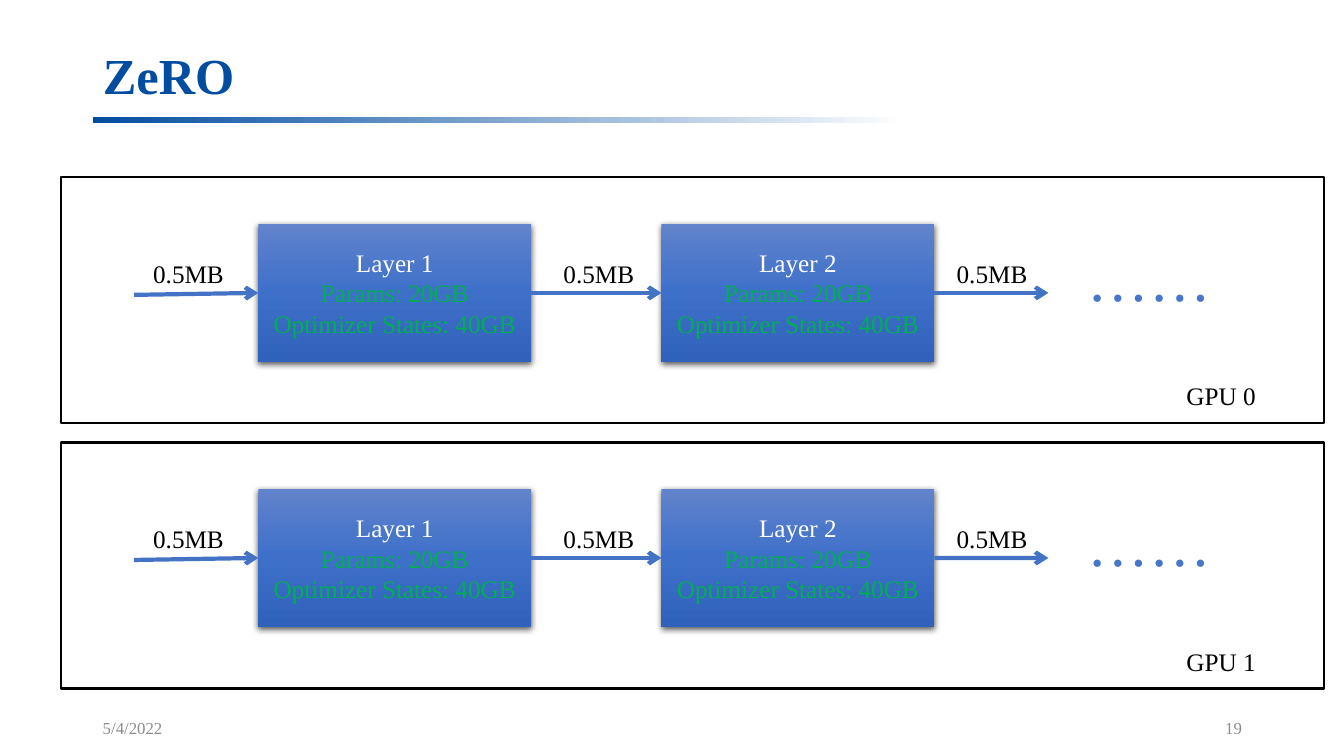
from lxml import etree
from pptx import Presentation
from pptx import util as u
from pptx.dml.color import RGBColor
from pptx.enum import shapes, text
from pptx.oxml.ns import qn

FONT = "Times New Roman"
NAVY = RGBColor(0x03, 0x4D, 0xA1)
BLUE = RGBColor(0x44, 0x72, 0xC4)
DOT_BLUE = RGBColor(0x48, 0x76, 0xCA)
GREEN = RGBColor(0x00, 0xB0, 0x50)
GRAY = RGBColor(0x8C, 0x8C, 0x8C)
BLACK = RGBColor(0, 0, 0)
WHITE = RGBColor(0xFF, 0xFF, 0xFF)
BAR_STOPS = [(0, NAVY), (64, RGBColor(0xA4, 0xBF, 0xDD)),
             (79, RGBColor(0xCA, 0xD9, 0xEB)), (100, WHITE)]
LAYER_STOPS = [(0, RGBColor(0x61, 0x83, 0xCB)), (50, RGBColor(0x3E, 0x70, 0xCA)),
               (100, RGBColor(0x30, 0x62, 0xBB))]


def format_paragraph(p, size, color, bold=False, align=text.PP_ALIGN.LEFT):
    p.alignment = align
    for r in p.runs:
        r.font.name = FONT
        r.font.size = u.Pt(size)
        r.font.bold = bold
        r.font.color.rgb = color


def add_rect(s, x, y, w, h):
    sp = s.shapes.add_shape(shapes.MSO_SHAPE.RECTANGLE, u.Cm(x), u.Cm(y), u.Cm(w), u.Cm(h))
    sp.shadow.inherit = False
    sp.line.fill.background()
    return sp


def add_label(s, x, y, w, h, label, size=18, color=BLACK, align=text.PP_ALIGN.LEFT,
              anchor=text.MSO_ANCHOR.TOP):
    tf = s.shapes.add_textbox(u.Cm(x), u.Cm(y), u.Cm(w), u.Cm(h)).text_frame
    tf.word_wrap = False
    tf.vertical_anchor = anchor
    tf.text = label
    format_paragraph(tf.paragraphs[0], size, color, align=align)


def fill_gradient(sp, stops, angle):
    sp.fill.gradient()
    sp.fill.gradient_angle = angle
    gs_lst = sp._element.spPr.find(qn("a:gradFill")).find(qn("a:gsLst"))
    for gs in list(gs_lst):
        gs_lst.remove(gs)
    for pos, color in stops:
        gs = etree.SubElement(gs_lst, qn("a:gs"), pos=str(pos * 1000))
        etree.SubElement(gs, qn("a:srgbClr"), val=str(color))


def add_soft_shadow(sp):
    effects = sp._element.spPr.find(qn("a:effectLst"))
    shadow = etree.SubElement(effects, qn("a:outerShdw"), blurRad="57150", dist="19050",
                              dir="5400000", algn="ctr", rotWithShape="0")
    color = etree.SubElement(shadow, qn("a:srgbClr"), val=str(BLACK))
    etree.SubElement(color, qn("a:alpha"), val="63000")


def add_arrow(s, x1, y1, x2, y2, source=None, target=None):
    c = s.shapes.add_connector(shapes.MSO_CONNECTOR.STRAIGHT,
                               u.Cm(x1), u.Cm(y1), u.Cm(x2), u.Cm(y2))
    if source is not None:
        c.begin_connect(source, 3)
    if target is not None:
        c.end_connect(target, 1)
    c.line.color.rgb = BLUE
    c.line.width = u.Pt(3)
    etree.SubElement(c.line._get_or_add_ln(), qn("a:tailEnd"), type="arrow")
    etree.SubElement(c._element.spPr, qn("a:effectLst"))


def add_layer(s, x, y, w, h, name):
    sp = add_rect(s, x, y, w, h)
    fill_gradient(sp, LAYER_STOPS, 270)
    add_soft_shadow(sp)
    tf = sp.text_frame
    tf.word_wrap = True
    tf.vertical_anchor = text.MSO_ANCHOR.MIDDLE
    tf.text = f"{name}\nParams: 20GB\nOptimizer States: 40GB"
    for p, color in zip(tf.paragraphs, (WHITE, GREEN, GREEN)):
        format_paragraph(p, 18, color, align=text.PP_ALIGN.CENTER)
    return sp


def add_gpu_panel(s, x, y, w, h, name):
    layer_w, layer_h = 6.88, 3.48
    layer_y = y + 1.17
    mid = layer_y + layer_h / 2
    layer_xs = [x + 4.98, x + 15.14]
    first, second = [add_layer(s, lx, layer_y, layer_w, layer_h, f"Layer {i}")
                     for i, lx in enumerate(layer_xs, 1)]
    add_arrow(s, x + 1.85, mid + 0.05, layer_xs[0], mid, target=first)
    add_arrow(s, layer_xs[0] + layer_w, mid, layer_xs[1], mid, first, second)
    add_arrow(s, layer_xs[1] + layer_w, mid, x + 24.89, mid, source=second)
    for dx in (2.08, 12.42, 22.33):
        add_label(s, x + dx, y + 1.91, 2.31, 1.02, "0.5MB")
    add_label(s, x + 25.63, y + 1.45, 3.66, 2.13, "……", 44, DOT_BLUE)
    frame = add_rect(s, x, y, w, h)
    frame.fill.background()
    frame.line.color.rgb = BLACK
    frame.line.width = u.Pt(1.5)
    add_label(s, x + w - 3.71, y + h - 1.2, 2.29, 1.02, name)


def add_header(s, x, y, w, h):
    title = s.shapes.title
    title.left, title.top, title.width, title.height = map(u.Cm, (x, y, w, h))
    tf = title.text_frame
    tf.auto_size = text.MSO_AUTO_SIZE.NONE
    tf.vertical_anchor = text.MSO_ANCHOR.MIDDLE
    tf.text = "ZeRO"
    tf.paragraphs[0].line_spacing = 0.9
    format_paragraph(tf.paragraphs[0], 36, NAVY, bold=True)
    bar = add_rect(s, x, y + h + 0.03, 20.52, 0.16)
    fill_gradient(bar, BAR_STOPS, 0)


def add_footer(s, x, y, w, h):
    part_w = 7.62
    middle = text.MSO_ANCHOR.MIDDLE
    add_label(s, x, y, part_w, h, "5/4/2022", 12, GRAY, anchor=middle)
    add_label(s, x + w - part_w, y, part_w, h, "19", 12, GRAY, text.PP_ALIGN.RIGHT, middle)


def main():
    prs = Presentation()
    prs.slide_width, prs.slide_height = u.Cm(33.87), u.Cm(19.05)
    s = prs.slides.add_slide(prs.slide_layouts[5])
    add_header(s, 2.34, 1.02, 29.21, 1.9)
    for i in range(2):
        add_gpu_panel(s, 1.53, 4.47 + i * 6.68, 31.83, 6.2, f"GPU {i}")
    add_footer(s, 2.34, 17.83, 29.21, 1.02)
    prs.save("out.pptx")


if __name__ == "__main__":
    main()
